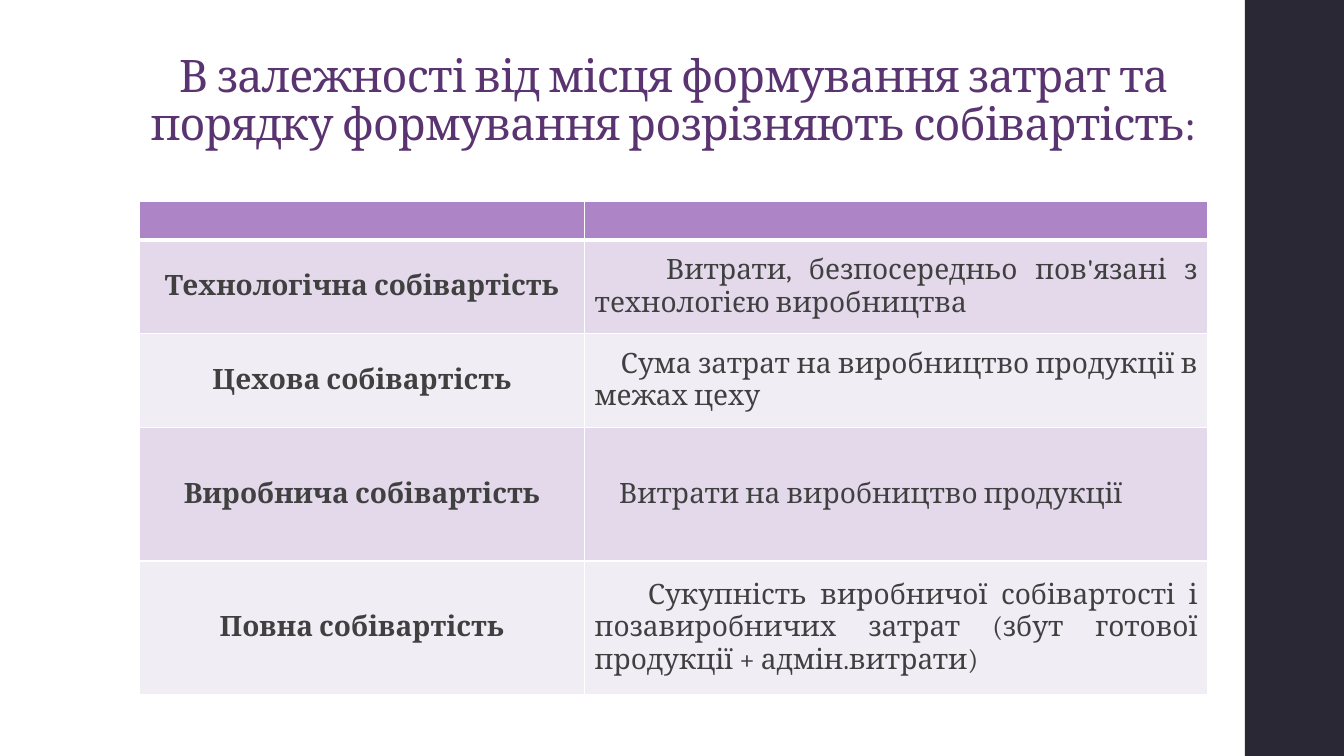
from typing import Any, NamedTuple

from lxml.etree import SubElement as Sub
from pptx import Presentation
from pptx.dml.color import RGBColor
from pptx.enum.shapes import MSO_SHAPE as Shape
from pptx.enum.text import MSO_ANCHOR as Anchor, PP_ALIGN as Align
from pptx.oxml.ns import qn
from pptx.util import Pt

WHITE = RGBColor(0xFF, 0xFF, 0xFF)
NAVY = RGBColor(0x29, 0x28, 0x34)
PLUM = RGBColor(0x5A, 0x34, 0x71)
GRAY = RGBColor(0x40, 0x40, 0x40)
HEAD = RGBColor(0xAD, 0x84, 0xC6)
BANDS = (RGBColor(0xE3, 0xD9, 0xEA), RGBColor(0xF1, 0xED, 0xF5))

FACE = "Cambria"
LEFT, WIDE = 99.4, 763.2
COLS = (318.2, 445)
TOP, CAP = 144, 27.4
TITLE = "В залежності від місця формування затрат та порядку формування розрізняють собівартість:"


class Cost(NamedTuple):
    name: str
    text: str
    high: float
    indent: float


COSTS = (
    Cost("Технологічна собівартість",
         "Витрати, безпосередньо пов'язані з технологією виробництва", 67, 51),
    Cost("Цехова собівартість",
         "Сума затрат на виробництво продукції в межах цеху", 67, 18.6),
    Cost("Виробнича собівартість",
         "Витрати на виробництво продукції", 95.4, 17.4),
    Cost("Повна собівартість",
         "Сукупність виробничої собівартості і позавиробничих затрат "
         "(збут готової продукції + адмін.витрати)", 95.4, 38),
)


def apply(item: Any, form: dict[str, Any]) -> None:
    for key, value in form.items():
        setattr(item, key, value)


def write(para: Any, text: str, size: float, color: RGBColor, bold: bool, align: Any) -> Any:
    para.alignment = align
    run = para.add_run()
    run.text = text
    apply(run.font, {"name": FACE, "size": Pt(size), "bold": bold})
    run.font.color.rgb = color
    return run


def paint(cell: Any, color: RGBColor, over: float, under: float) -> None:
    props = cell._tc.get_or_add_tcPr()
    for side, width in {"L": 1, "R": 1, "T": over, "B": under}.items():
        line = Sub(props, qn(f"a:ln{side}"), w=str(Pt(width)))
        Sub(Sub(line, qn("a:solidFill")), qn("a:srgbClr"), val=str(WHITE))
    cell.fill.solid()
    cell.fill.fore_color.rgb = color


def add_bar(slide: Any) -> None:
    bar = slide.shapes.add_shape(Shape.RECTANGLE, Pt(889.2), Pt(0), Pt(70.8), Pt(540))
    bar.shadow.inherit = False
    bar.fill.solid()
    bar.fill.fore_color.rgb = NAVY
    bar.line.fill.background()


def add_title(slide: Any) -> None:
    box = slide.shapes.add_textbox(Pt(LEFT), Pt(28.8), Pt(WIDE), Pt(82))
    frame = box.text_frame
    apply(frame, {"word_wrap": True, "vertical_anchor": Anchor.BOTTOM})
    para = frame.paragraphs[0]
    para.line_spacing = 0.9
    run = write(para, TITLE, 32, PLUM, False, Align.CENTER)
    run.font._element.set("spc", "-50")


def add_costs(slide: Any) -> None:
    highs = [CAP] + [cost.high for cost in COSTS]
    frame = slide.shapes.add_table(
        len(highs), len(COLS), Pt(LEFT), Pt(TOP), Pt(WIDE), Pt(sum(highs)))
    table = frame.table
    apply(table, {"first_row": False, "horz_banding": False})
    for col, wide in zip(table.columns, COLS):
        col.width = Pt(wide)
    for row, high in zip(table.rows, highs):
        row.height = Pt(high)
    for cell in table.rows[0].cells:
        apply(cell, {"margin_top": 0, "margin_bottom": 0})
        paint(cell, HEAD, 1, 3)
    for num, cost in enumerate(COSTS):
        cells = table.rows[num + 1].cells
        for cell in cells:
            cell.vertical_anchor = Anchor.MIDDLE
            paint(cell, BANDS[num % 2], 1 if num else 3, 1)
        name, text = (cell.text_frame.paragraphs[0] for cell in cells)
        write(name, cost.name, 20, GRAY, True, Align.CENTER)
        write(text, cost.text, 20, GRAY, False, Align.JUSTIFY)
        text._p.get_or_add_pPr().set("indent", str(Pt(cost.indent)))


def main() -> None:
    deck = Presentation()
    apply(deck, {"slide_width": Pt(960), "slide_height": Pt(540)})
    slide = deck.slides.add_slide(deck.slide_layouts[6])
    add_bar(slide)
    add_title(slide)
    add_costs(slide)
    deck.save("out.pptx")


if __name__ == "__main__":
    main()
